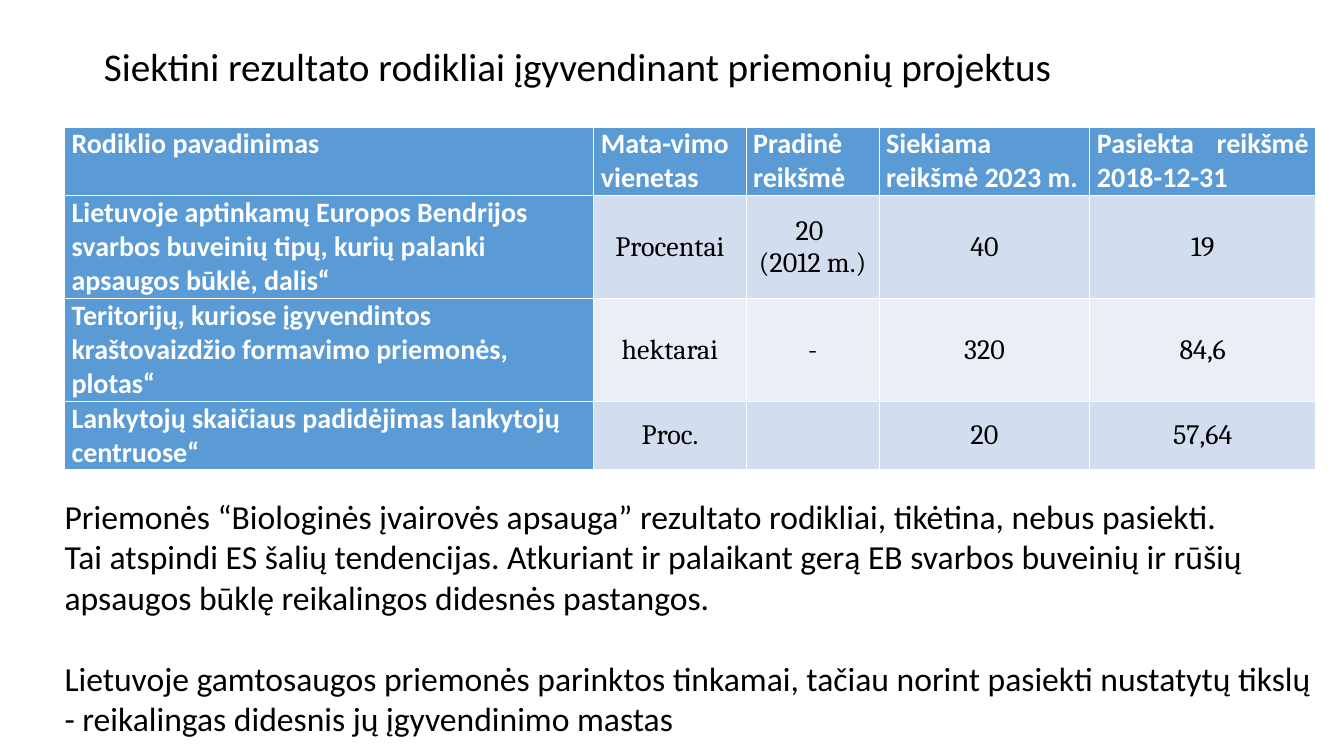
from lxml import etree
from pptx import Presentation
from pptx.dml.color import RGBColor
from pptx.enum.text import MSO_ANCHOR, MSO_AUTO_SIZE, PP_ALIGN
from pptx.oxml.ns import qn
from pptx.util import Inches, Pt

LEFT, CENTER, JUSTIFY = PP_ALIGN.LEFT, PP_ALIGN.CENTER, PP_ALIGN.JUSTIFY
TOP, MIDDLE = MSO_ANCHOR.TOP, MSO_ANCHOR.MIDDLE
NO_AUTOFIT = MSO_AUTO_SIZE.NONE

BLACK = RGBColor(0x00, 0x00, 0x00)
WHITE = RGBColor(0xFF, 0xFF, 0xFF)
BLUE = RGBColor(0x5B, 0x9B, 0xD5)
BAND_DARK = RGBColor(0xD2, 0xDE, 0xEF)
BAND_LIGHT = RGBColor(0xEA, 0xEF, 0xF7)

COLUMN_WIDTHS = [5.25, 1.51, 1.32, 2.09, 2.24]
ROW_HEIGHTS = [0.67, 1.0, 1.0, 0.66]
INDICATORS = [
    ["Rodiklio pavadinimas", "Mata-vimo vienetas", "Pradinė reikšmė",
     "Siekiama reikšmė 2023 m.", "Pasiekta reikšmė 2018-12-31"],
    ["Lietuvoje aptinkamų Europos Bendrijos svarbos buveinių tipų, kurių palanki "
     "apsaugos būklė, dalis“", "Procentai", "20 \n(2012 m.)", "40", "19"],
    ["Teritorijų, kuriose įgyvendintos kraštovaizdžio formavimo priemonės, plotas“",
     "hektarai", "-", "320", "84,6"],
    ["Lankytojų skaičiaus padidėjimas lankytojų centruose“", "Proc.", "", "20", "57,64"],
]
# Each conclusion with the space before it in points
CONCLUSIONS = [
    ("Priemonės “Biologinės įvairovės apsauga” rezultato rodikliai, tikėtina, "
     "nebus pasiekti.", 0),
    ("Tai atspindi ES šalių tendencijas. Atkuriant ir palaikant gerą EB svarbos "
     "buveinių ir rūšių apsaugos būklę reikalingos didesnės pastangos.", 0),
    ("Lietuvoje gamtosaugos priemonės parinktos tinkamai, tačiau norint pasiekti "
     "nustatytų tikslų - reikalingas didesnis jų įgyvendinimo mastas", 29),
]


def place(shape, left, top, width, height):
    shape.left, shape.top = Inches(left), Inches(top)
    shape.width, shape.height = Inches(width), Inches(height)
    shape.text_frame.auto_size = NO_AUTOFIT
    shape.text_frame.vertical_anchor = TOP


def set_font(paragraph, name, size, color, bold=False):
    paragraph.font.name = name
    paragraph.font.size = Pt(size)
    paragraph.font.color.rgb = color
    paragraph.font.bold = bold


presentation = Presentation()
presentation.slide_width = Inches(13.33)
presentation.slide_height = Inches(7.5)
slide = presentation.slides.add_slide(presentation.slide_layouts[1])

title = slide.shapes.title
place(title, 0.93, 0.37, 9.88, 0.57)
title.text_frame.text = "Siektini rezultato rodikliai įgyvendinant priemonių projektus"
title.text_frame.word_wrap = False
heading = title.text_frame.paragraphs[0]
heading.alignment = LEFT
set_font(heading, "Calibri", 28, BLACK)

table = slide.shapes.add_table(
    len(ROW_HEIGHTS), len(COLUMN_WIDTHS),
    Inches(0.64), Inches(1.26), Inches(12.41), Inches(3.33)).table
table.first_col = True
for column, width in zip(table.columns, COLUMN_WIDTHS):
    column.width = Inches(width)
for row, height in zip(table.rows, ROW_HEIGHTS):
    row.height = Inches(height)

for row_index, values in enumerate(INDICATORS):
    for column_index, value in enumerate(values):
        is_header = row_index == 0
        is_label = is_header or column_index == 0
        cell = table.cell(row_index, column_index)
        cell.margin_left = cell.margin_right = Inches(0.07)
        cell.margin_top = cell.margin_bottom = 0
        cell.vertical_anchor = TOP if is_header else MIDDLE
        cell.fill.solid()
        band = BAND_DARK if row_index % 2 else BAND_LIGHT
        cell.fill.fore_color.rgb = BLUE if is_label else band
        cell.text_frame.text = value
        for paragraph in cell.text_frame.paragraphs:
            if is_header:
                paragraph.alignment = JUSTIFY
            else:
                paragraph.alignment = LEFT if is_label else CENTER
            if is_label:
                set_font(paragraph, "Calibri", 20, WHITE, bold=True)
            else:
                set_font(paragraph, "Cambria", 20, BLACK)

body = slide.placeholders[1]
place(body, 0.54, 4.87, 12.6, 2.52)
body.text_frame.text = "\n".join(text for text, _ in CONCLUSIONS)
for paragraph, (_, space_before) in zip(body.text_frame.paragraphs, CONCLUSIONS):
    properties = paragraph._p.get_or_add_pPr()
    properties.set("marL", "0")
    properties.set("indent", "0")
    etree.SubElement(properties, qn("a:buNone"))
    paragraph.space_before = Pt(space_before)
    set_font(paragraph, "Calibri", 24, BLACK)

presentation.save("out.pptx")
